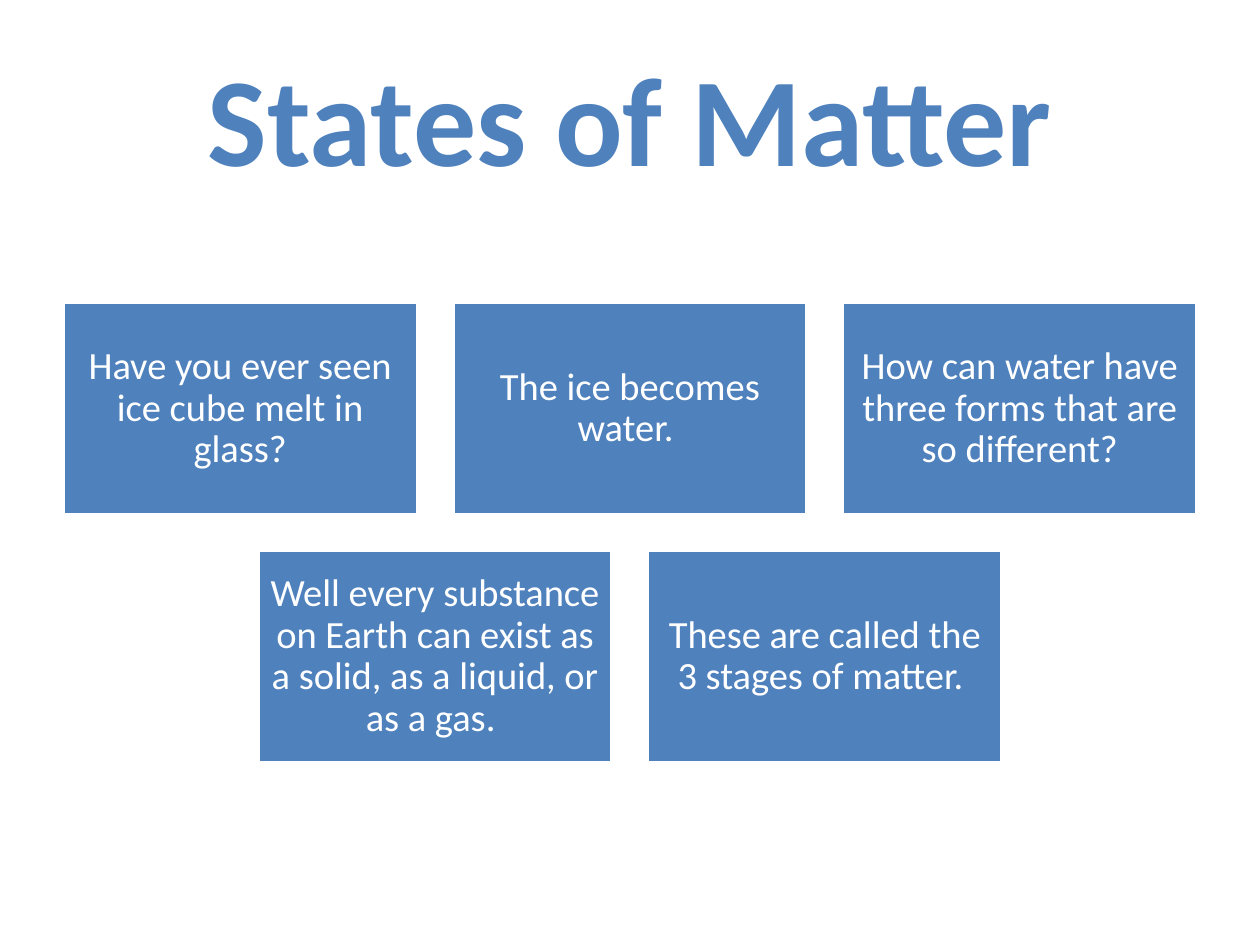
import pptx
import pptx.dml.color
import pptx.enum.shapes
import pptx.enum.text
import pptx.util

Pt = pptx.util.Pt
RGB = pptx.dml.color.RGBColor.from_string

TITLE = "States of Matter"
ROWS = [
    [
        "Have you ever seen ice cube melt in glass?",
        "The ice becomes water. ",
        "How can water have three forms that are so different?",
    ],
    [
        "Well every substance on Earth can exist as a solid, as a liquid, or as a gas. ",
        "These are called the 3 stages of matter. ",
    ],
]
COLORS = {"blue": "4F81BD", "white": "FFFFFF"}
SLIDE_W, SLIDE_H = 720, 540
CARD_W, CARD_H, GAP = 202.5, 121.5, 20.25
CARDS_TOP = 172.8
TITLE_FONT = {"name": "Calibri", "size": Pt(72), "bold": True}
CARD_FONT = {"name": "Calibri", "size": Pt(22), "bold": False}
FRAME = {"word_wrap": True, "vertical_anchor": pptx.enum.text.MSO_ANCHOR.MIDDLE}
CARD_MARGINS = {
    f"margin_{side}": Pt(6.6) for side in ("left", "right", "top", "bottom")
}


def set_all(obj, values):
    for key, value in values.items():
        setattr(obj, key, value)


def write(sp, text, font, color, spacing, frame):
    tf = sp.text_frame
    set_all(tf, frame)
    p = tf.paragraphs[0]
    set_all(p, {"alignment": pptx.enum.text.PP_ALIGN.CENTER, "line_spacing": spacing})
    r = p.add_run()
    r.text = text
    set_all(r.font, font)
    r.font.color.rgb = RGB(COLORS[color])


def add_card(s, x, y, text):
    sp = s.shapes.add_shape(
        pptx.enum.shapes.MSO_SHAPE.RECTANGLE, Pt(x), Pt(y), Pt(CARD_W), Pt(CARD_H)
    )
    sp.shadow.inherit = False
    sp.fill.solid()
    sp.fill.fore_color.rgb = RGB(COLORS["blue"])
    sp.line.color.rgb = RGB(COLORS["white"])
    sp.line.width = Pt(2)
    write(sp, text, CARD_FONT, "white", 0.9, {**FRAME, **CARD_MARGINS})


def main():
    prs = pptx.Presentation()
    set_all(prs, {"slide_width": Pt(SLIDE_W), "slide_height": Pt(SLIDE_H)})
    s = prs.slides.add_slide(prs.slide_layouts[6])
    title = s.shapes.add_textbox(Pt(36), Pt(21.6), Pt(648), Pt(90))
    write(title, TITLE, TITLE_FONT, "blue", 1.0, FRAME)
    for i, row in enumerate(ROWS):
        row_w = len(row) * (CARD_W + GAP) - GAP
        left = (SLIDE_W - row_w) / 2
        for j, text in enumerate(row):
            add_card(s, left + j * (CARD_W + GAP), CARDS_TOP + i * (CARD_H + GAP), text)
    prs.save("out.pptx")


if __name__ == "__main__":
    main()
